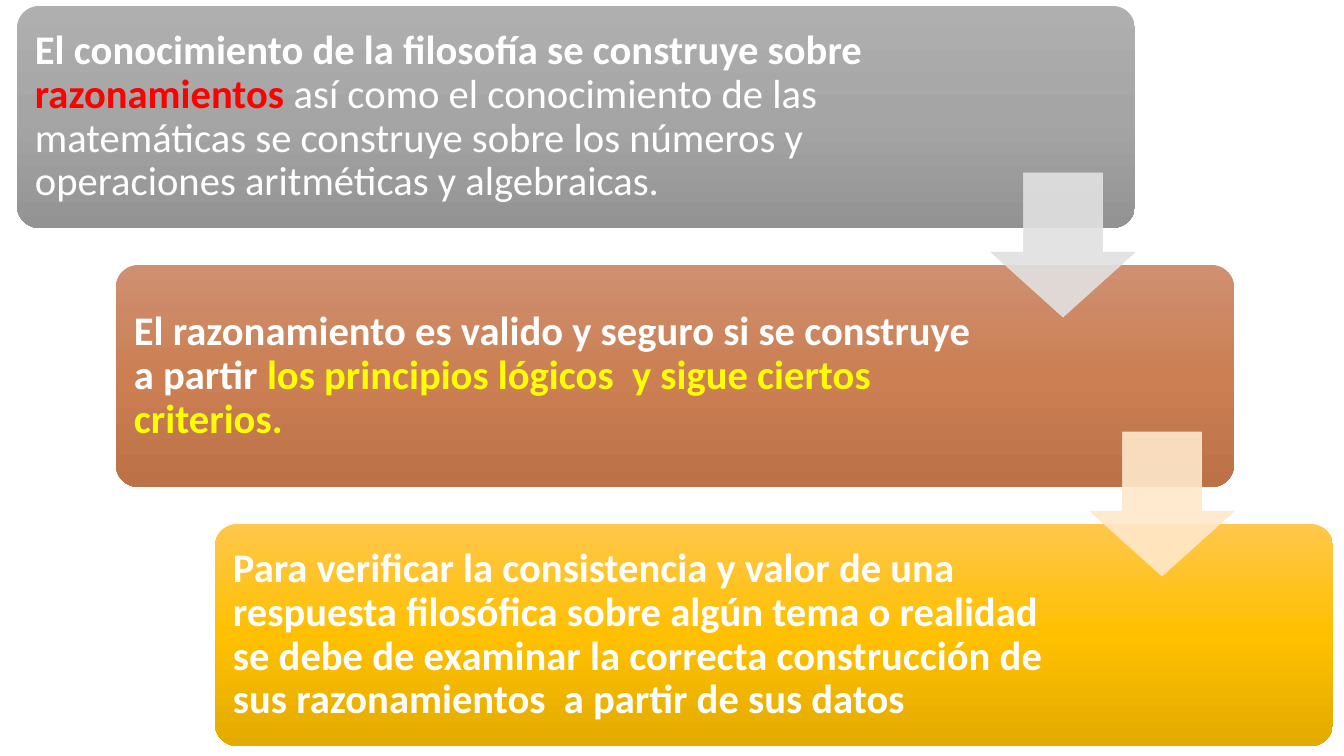
import copy
from dataclasses import dataclass

import pptx
import pptx.util
import pptx.dml.color
import pptx.enum.shapes
import pptx.enum.text
import pptx.oxml
import pptx.oxml.ns

EMU_PER_PX = 914400 / 100.8


@dataclass(frozen=True)
class Theme:
    font: str = "Calibri"
    text_size: int = 29
    arrow_line: float = 0.5
    arrow_opacity: int = 90
    white: str = "FFFFFF"
    red: str = "FF0000"
    yellow: str = "FFFF00"
    gray: tuple = ("AFAFAF", "A5A5A5", "939393")
    copper: tuple = ("CF9072", "CB7F53", "BD7147")
    gold: tuple = ("FFC74B", "FFC000", "E3AB00")
    pale_gray: str = "E1E1E1"
    pale_gold: str = "FFE8CB"


THEME = Theme()

# Each step: gradient, text width, runs of (text, colour, bold)
STEPS = [
    (THEME.gray, 878, [
        ("El conocimiento de la filosofía se construye sobre ", THEME.white, True),
        ("razonamientos ", THEME.red, True),
        ("así como el conocimiento de las matemáticas se construye sobre los "
         "números y operaciones aritméticas y algebraicas.", THEME.white, False),
    ]),
    (THEME.copper, 862, [
        ("El razonamiento es valido y seguro si se construye a partir ", THEME.white, True),
        ("los principios lógicos  y sigue ciertos criterios.", THEME.yellow, True),
    ]),
    (THEME.gold, 862, [
        ("Para verificar la consistencia y valor de una respuesta filosófica sobre "
         "algún tema o realidad se debe de examinar la correcta construcción de sus "
         "razonamientos  a partir de sus datos", THEME.white, True),
    ]),
]
ARROW_COLORS = [THEME.pale_gray, THEME.pale_gold]


def px(length):
    return pptx.util.Emu(round(length * EMU_PER_PX))


def rgb(color):
    return pptx.dml.color.RGBColor.from_string(color)


def fill_gradient(shape, colors):
    """Fill from top to bottom with evenly spaced colours."""
    shape.fill.gradient()
    shape.fill.gradient_angle = 270
    stop_list = shape._element.spPr.find(".//" + pptx.oxml.ns.qn("a:gsLst"))
    while len(stop_list) < len(colors):
        stop_list.append(copy.deepcopy(stop_list[-1]))
    for i, (stop, color) in enumerate(zip(shape.fill.gradient_stops, colors)):
        stop.color.rgb = rgb(color)
        stop.position = i / (len(colors) - 1)


def set_opacity(shape, percent):
    for color in shape._element.spPr.iter(pptx.oxml.ns.qn("a:srgbClr")):
        alpha = pptx.oxml.parse_xml(f"<a:alpha {pptx.oxml.ns.nsdecls('a')}/>")
        alpha.set("val", str(percent * 1000))
        color.append(alpha)


def add_step(slide, box, gradient, text_width, phrases):
    left, top, width, height = box
    card = slide.shapes.add_shape(
        pptx.enum.shapes.MSO_SHAPE.ROUNDED_RECTANGLE, *map(px, box))
    card.adjustments[0] = 0.1
    card.shadow.inherit = False
    card.line.fill.background()
    fill_gradient(card, gradient)

    pad = 6
    statement = slide.shapes.add_textbox(
        px(left + pad), px(top + pad), px(text_width), px(height - 2 * pad))
    frame = statement.text_frame
    frame.word_wrap = True
    frame.vertical_anchor = pptx.enum.text.MSO_ANCHOR.MIDDLE
    frame.margin_left = frame.margin_right = px(12)
    frame.margin_top = frame.margin_bottom = px(12)
    paragraph = frame.paragraphs[0]
    paragraph.line_spacing = 0.9
    for text, color, bold in phrases:
        run = paragraph.add_run()
        run.text = text
        run.font.name = THEME.font
        run.font.size = pptx.util.Pt(THEME.text_size)
        run.font.bold = bold
        run.font.color.rgb = rgb(color)


def add_step_arrow(slide, box, color):
    arrow = slide.shapes.add_shape(
        pptx.enum.shapes.MSO_SHAPE.DOWN_ARROW, *map(px, box))
    arrow.adjustments[0] = 0.55
    arrow.adjustments[1] = 0.45
    arrow.shadow.inherit = False
    arrow.fill.solid()
    arrow.fill.fore_color.rgb = rgb(color)
    arrow.line.color.rgb = rgb(color)
    arrow.line.width = pptx.util.Pt(THEME.arrow_line)
    set_opacity(arrow, THEME.arrow_opacity)


def add_staircase(slide, box):
    """Place the steps from top left to bottom right, then the arrows over them."""
    left, top, width, height = box
    shift, drop = 99, 259
    card_width = width - shift * (len(STEPS) - 1)
    card_height = height - drop * (len(STEPS) - 1)
    for i, step in enumerate(STEPS):
        add_step(slide, (left + i * shift, top + i * drop, card_width, card_height), *step)
    arrow_size = 144
    for i, color in enumerate(ARROW_COLORS):
        arrow_left = left + i * shift + card_width - arrow_size
        add_step_arrow(
            slide, (arrow_left, top + i * drop + 167, arrow_size, arrow_size), color)


def main():
    deck = pptx.Presentation()
    deck.slide_width, deck.slide_height = px(1344), px(756)
    slide = deck.slides.add_slide(deck.slide_layouts.get_by_name("Blank"))
    add_staircase(slide, (17, 6, 1316, 740))
    deck.save("out.pptx")


if __name__ == "__main__":
    main()
